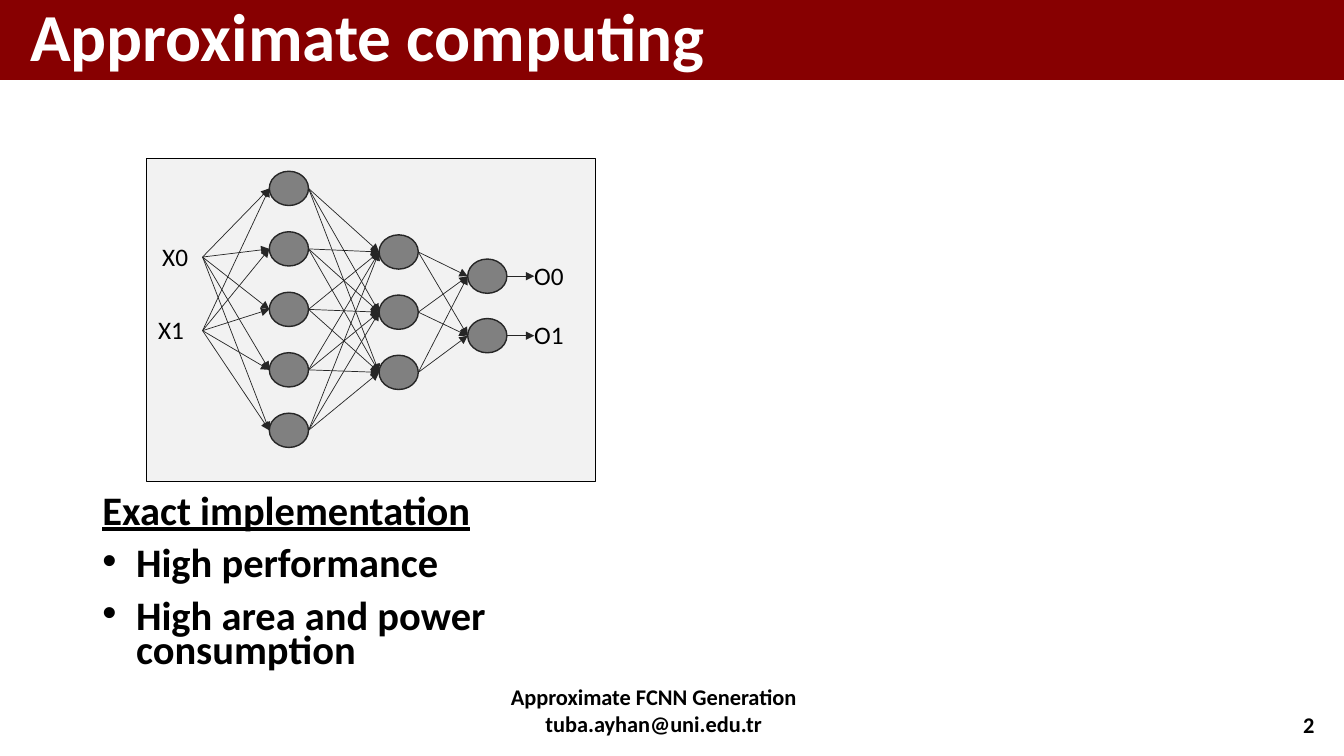
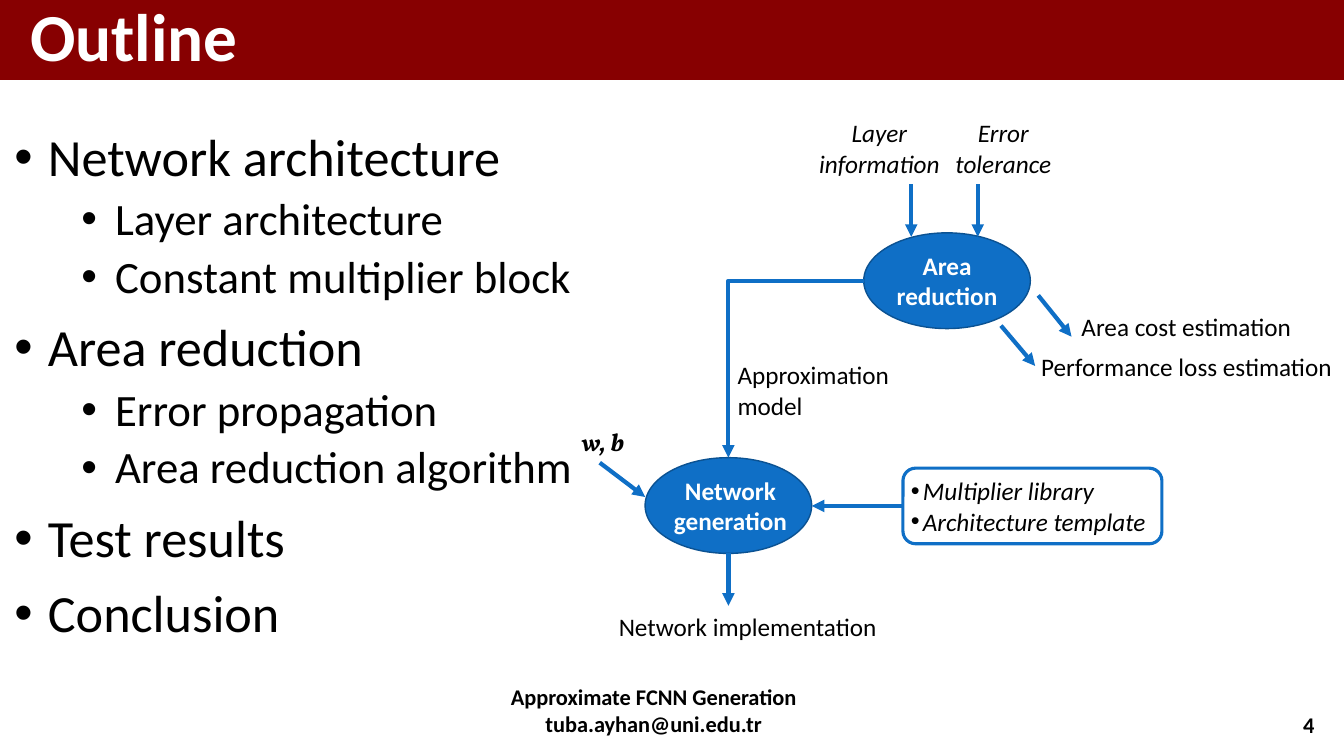
from itertools import product

from lxml import etree
from pptx import Presentation
from pptx.dml.color import RGBColor
from pptx.enum.shapes import MSO_CONNECTOR, MSO_SHAPE
from pptx.enum.text import MSO_ANCHOR, MSO_AUTO_SIZE, PP_ALIGN
from pptx.oxml.ns import qn
from pptx.util import Pt

RECT, OVAL, ROUNDED = MSO_SHAPE.RECTANGLE, MSO_SHAPE.OVAL, MSO_SHAPE.ROUNDED_RECTANGLE
STRAIGHT, ELBOW = MSO_CONNECTOR.STRAIGHT, MSO_CONNECTOR.ELBOW
TOP, MIDDLE, BOTTOM = MSO_ANCHOR.TOP, MSO_ANCHOR.MIDDLE, MSO_ANCHOR.BOTTOM
LEFT, CENTER, RIGHT = PP_ALIGN.LEFT, PP_ALIGN.CENTER, PP_ALIGN.RIGHT

MAROON = RGBColor(0x87, 0x00, 0x01)
WHITE = RGBColor(0xFF, 0xFF, 0xFF)
BLACK = RGBColor(0x00, 0x00, 0x00)
PANEL_GRAY = RGBColor(0xF2, 0xF2, 0xF2)
NEURON_GRAY = RGBColor(0x80, 0x80, 0x80)
DARK_GRAY = RGBColor(0x26, 0x26, 0x26)
BLUE = RGBColor(0x0F, 0x6F, 0xC6)
DARK_BLUE = RGBColor(0x0B, 0x52, 0x92)

FONT = "Calibri"
SLIDE_W, SLIDE_H = 960, 540
BAND_BOX = (0, 0, SLIDE_W, 57)
TITLE_BOX = (14.4, 0, 931, 57)
FOOTER_BOX = (318, 501, 324, 29)
NUMBER_BOX = (699, 502, 247, 29)
FOOTER_LINES = ["Approximate FCNN Generation", "tuba.ayhan@uni.edu.tr"]


# ---- Text and shape helpers ----
def place(shape, box):
    shape.left, shape.top, shape.width, shape.height = map(Pt, box)


def style(paragraph, size=18, color=BLACK, bold=False, italic=False,
          align=LEFT, font=FONT):
    paragraph.alignment = align
    paragraph.font.name = font
    paragraph.font.size = Pt(size)
    paragraph.font.bold = bold
    paragraph.font.italic = italic
    paragraph.font.color.rgb = color


def set_bullet(paragraph, indent, hang):
    """Hanging bullet; without a hang the paragraph has no bullet."""
    props = paragraph._p.get_or_add_pPr()
    props.set("marL", str(Pt(indent)))
    props.set("indent", str(-Pt(hang)))
    if hang:
        etree.SubElement(props, qn("a:buFont")).set("typeface", "Arial")
        etree.SubElement(props, qn("a:buChar")).set("char", "•")
    else:
        etree.SubElement(props, qn("a:buNone"))


def set_text(shape, lines, anchor=TOP, sides=(7.2, 7.2)):
    frame = shape.text_frame
    frame.word_wrap = True
    frame.auto_size = MSO_AUTO_SIZE.NONE
    frame.vertical_anchor = anchor
    frame.margin_left, frame.margin_right = map(Pt, sides)
    frame.margin_top = frame.margin_bottom = Pt(3.6)
    frame.text = "\n".join(lines)
    return frame


def write(shape, lines, anchor=TOP, sides=(7.2, 7.2), bullet=0, **looks):
    frame = set_text(shape, lines, anchor, sides)
    for paragraph in frame.paragraphs:
        if bullet:
            set_bullet(paragraph, bullet, bullet)
        style(paragraph, **looks)
    return frame


def add_label(slide, lines, box, **looks):
    return write(slide.shapes.add_textbox(*map(Pt, box)), lines, **looks)


def add_box(slide, kind, box, fill, line=None, width=1):
    shape = slide.shapes.add_shape(kind, *map(Pt, box))
    shape.shadow.inherit = False
    shape.fill.solid()
    shape.fill.fore_color.rgb = fill
    if line is None:
        shape.line.fill.background()
    else:
        shape.line.color.rgb = line
        shape.line.width = Pt(width)
    return shape


def add_arrow(slide, start, end, color, width, kind=STRAIGHT):
    arrow = slide.shapes.add_connector(kind, *map(Pt, (*start, *end)))
    arrow.line.color.rgb = color
    arrow.line.width = Pt(width)
    props = arrow.element.spPr
    etree.SubElement(props.find(qn("a:ln")), qn("a:tailEnd")).set("type", "triangle")
    etree.SubElement(props, qn("a:effectLst"))
    return arrow


# ---- Parts shared by the slides ----
def add_band(layout, slide):
    """Draw the title band and move it into the layout, behind everything."""
    band = add_box(slide, RECT, BAND_BOX, MAROON)
    layout.shapes.element.insert(2, band.element)


def add_content_slide(prs, layout, title, number):
    slide = prs.slides.add_slide(layout)
    place(slide.shapes.title, TITLE_BOX)
    heading = write(slide.shapes.title, [title], anchor=MIDDLE, size=48,
                    color=WHITE, bold=True)
    heading.paragraphs[0].line_spacing = 0.9
    footer = add_label(slide, FOOTER_LINES, FOOTER_BOX, anchor=BOTTOM, size=16,
                       bold=True, align=CENTER)
    footer.paragraphs[0]._p.get_or_add_pPr().set("marR", str(Pt(26)))
    add_label(slide, [str(number)], NUMBER_BOX, anchor=BOTTOM, size=16,
              bold=True, align=RIGHT)
    return slide


def fill_body(slide, box, items, spacing, bold=False):
    """Items are (text, level, size, indent, hang, space before)."""
    body = slide.placeholders[1]
    place(body, box)
    frame = set_text(body, [item[0] for item in items])
    for paragraph, item in zip(frame.paragraphs, items):
        _, level, size, indent, hang, before = item
        paragraph.level = level
        paragraph.line_spacing = spacing
        paragraph.space_before = Pt(before)
        set_bullet(paragraph, indent, hang)
        style(paragraph, size=size, bold=bold)
    return frame


# ---- Neural network panel ----
def draw_network(slide, box):
    left, top = box[:2]
    add_box(slide, RECT, box, PANEL_GRAY, BLACK, 0.25)
    radius_x, radius_y, label_h = 14, 12.25, 29

    def column(x, first_y, pitch, count):
        return [(left + x, top + first_y + pitch * i) for i in range(count)]

    inputs = column(40.3, 70.6, 52.6, 2)
    layers = [column(102, 21.6, 43.2, 5), column(180.4, 67, 43, 3),
              column(243.7, 84.3, 42.5, 2)]
    for x, y in sum(layers, []):
        add_box(slide, OVAL, (x - radius_x, y - radius_y, 2 * radius_x, 2 * radius_y),
                NEURON_GRAY, DARK_GRAY)

    # Every node of one layer feeds every node of the next
    sources = inputs
    for layer in layers:
        for start, (x, y) in product(sources, layer):
            add_arrow(slide, start, (x - radius_x, y), DARK_GRAY, 0.5)
        sources = [(x + radius_x, y) for x, y in layer]

    # Input and output names
    for i, (x, y) in enumerate(inputs):
        add_label(slide, [f"X{i}"], (x - 28.8 - 2.9 * i, y - 15, 30, label_h),
                  sides=(0, 0))
    for i, (x, y) in enumerate(sources):
        tip = x + 19.5
        add_arrow(slide, (x, y), (tip, y), DARK_GRAY, 0.5)
        add_label(slide, [f"O{i}"], (tip, y - 15, 32, label_h), sides=(0, 0))


# ---- Design flow diagram ----
def draw_flow(slide, left, top):
    def at(x, y, *size):
        return (left + x, top + y, *size)

    def flow_arrow(start, end, kind=STRAIGHT):
        return add_arrow(slide, at(*start), at(*end), BLUE, 3, kind)

    # Two processing steps
    steps = []
    for text, x, y, sides in [("Area reduction", 217, 86.3, (3, 3)),
                              ("Network generation", 60.8, 246.9, (3, 0))]:
        step = add_box(slide, OVAL, at(x, y, 119, 68.4), BLUE, DARK_BLUE)
        write(step, [text], anchor=MIDDLE, sides=sides, color=WHITE, bold=True,
              align=CENTER)
        steps.append(step)
    area, network = steps

    # Model handed from area reduction (left side) to network generation (top)
    model = flow_arrow((217, 120.5), (120.3, 246.9), ELBOW)
    model.element.spPr.find(qn("a:prstGeom")).set("prst", "bentConnector2")
    model.begin_connect(area, 2)
    model.end_connect(network, 0)
    model.begin_x = area.left
    model.begin_y = area.top + area.height // 2

    # Template library feeding network generation
    library = add_box(slide, ROUNDED, at(245, 254.4, 185, 54), WHITE, BLUE, 2.25)
    write(library, ["Multiplier library", "Architecture template"], anchor=MIDDLE,
          sides=(3, 0), bullet=8.6, italic=True)
    feed = flow_arrow((245, 281.4), (179.8, 281.4))
    feed.begin_connect(library, 1)

    for start, end in [((120.3, 315.3), (120.3, 352.7)),
                       ((250.9, 51.8), (250.9, 89.2)),
                       ((298.4, 51.8), (298.4, 89.2)),
                       ((28.4, 250.5), (60.8, 275)),
                       ((341.6, 131), (365.4, 160.5)),
                       ((315, 152.6), (339.4, 181.4))]:
        flow_arrow(start, end)

    # Inputs
    for text, x, y, w, h, looks in [
            ("Layer information", 179.6, 0.6, 97, 51, {}),
            ("Error tolerance", 268.2, 0.6, 97, 51, {}),
            ("w, b", 6.8, 221, 47.5, 29, {"font": "Vollkorn", "bold": True})]:
        add_label(slide, [text], at(x, y, w, h), sides=(3, 3), italic=True,
                  align=CENTER, **looks)

    # Results
    for text, x, y, w, h in [
            ("Approximation model", 119.8, 173.4, 125, 51),
            ("Network implementation", 34.9, 353.4, 242, 29),
            ("Performance loss estimation", 336.6, 167.7, 223, 29),
            ("Area cost estimation", 365.4, 138.9, 176, 29)]:
        add_label(slide, [text], at(x, y, w, h), sides=(7.2, 0))


# ---- Slides ----
def build_computing_slide(prs, layout):
    slide = add_content_slide(prs, layout, "Approximate computing", 2)
    items = [("Exact implementation", 0, 28.9, 0, 0, 13.3),
             ("High performance", 0, 28.9, 24, 24, 13.3),
             ("High area and power consumption", 0, 28.9, 24, 24, 13.3)]
    frame = fill_body(slide, (66, 352, 408, 135), items, 0.7, bold=True)
    frame.paragraphs[0].font.underline = True
    draw_network(slide, (104.4, 113, 321, 231))
    return slide


def build_outline_slide(prs, layout):
    slide = add_content_slide(prs, layout, "Outline", 4)
    topics = [("Network architecture", ["Layer architecture", "Constant multiplier block"]),
              ("Area reduction", ["Error propagation", "Area reduction algorithm"]),
              ("Test results", []),
              ("Conclusion", [])]
    items = []
    for topic, details in topics:
        items.append((topic, 0, 37.3, 24, 24, 13.3))
        items += [(detail, 1, 32, 72, 24, 6.7) for detail in details]
    fill_body(slide, (3, 90, 422, 343), items, 0.9)
    draw_flow(slide, 400, 80)


def main():
    prs = Presentation()
    prs.slide_width, prs.slide_height = Pt(SLIDE_W), Pt(SLIDE_H)
    layout = prs.slide_layouts[1]
    add_band(layout, build_computing_slide(prs, layout))
    build_outline_slide(prs, layout)
    prs.save("out.pptx")


if __name__ == "__main__":
    main()
